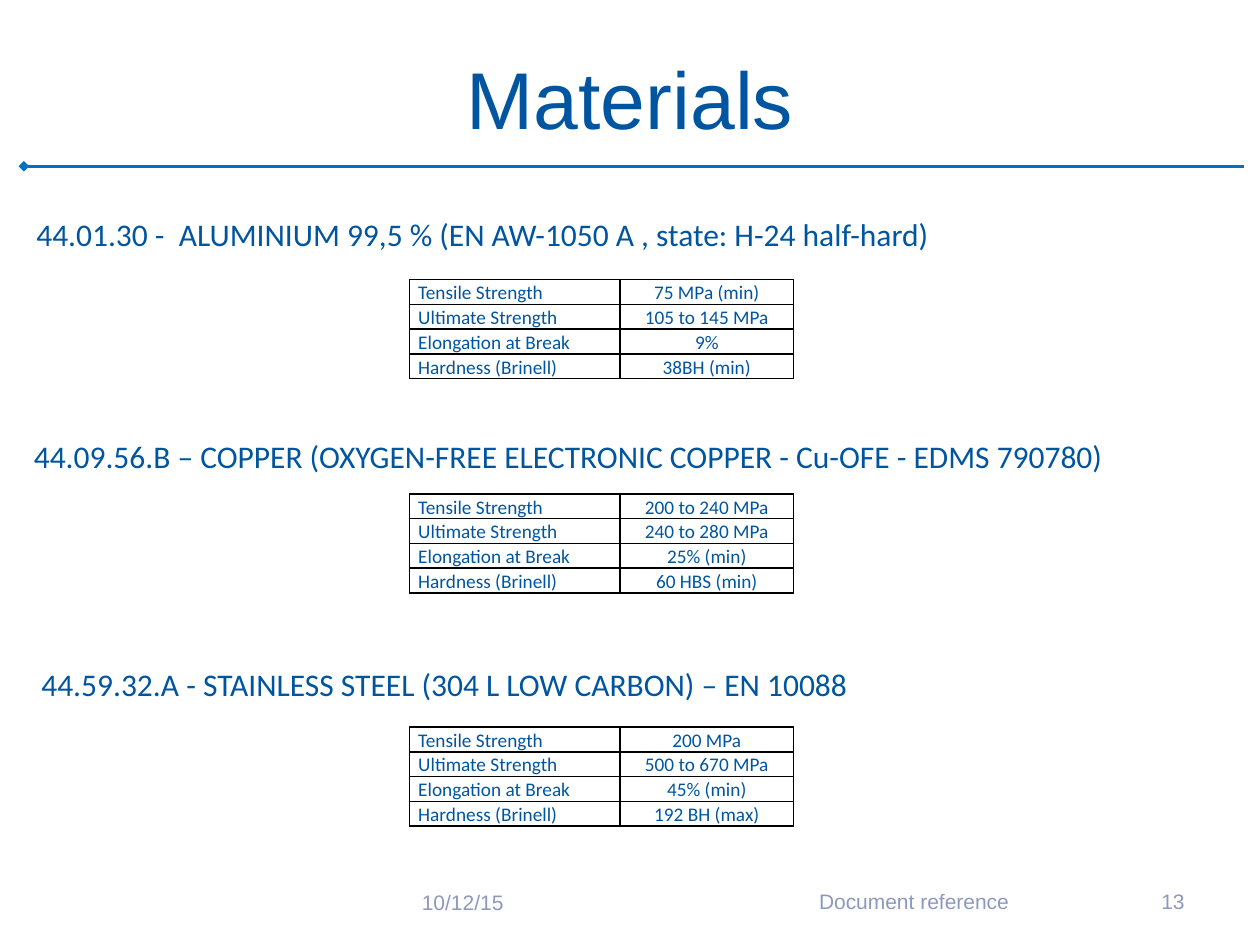
from lxml import etree
from pptx import Presentation
from pptx import util as u
from pptx.dml.color import RGBColor
from pptx.enum import shapes, text
from pptx.oxml import ns

Pt = u.Pt
HUES = {"blue": "0055A0", "rule": "0070C0", "foot": "8C99BE", "edge": "000000"}
SIDE = text.PP_ALIGN
MID = text.MSO_ANCHOR.MIDDLE
TOP = text.MSO_ANCHOR.TOP


def write(frame, words, align, hue, font, space=1.0):
    para = frame.paragraphs[0]
    para.alignment = align
    para.line_spacing = space
    run = para.add_run()
    run.text = words
    for key, val in font.items():
        setattr(run.font, key, val)
    run.font.color.rgb = RGBColor.from_string(HUES[hue])


def label(words, box, align, hue, font, anchor=MID, space=1.0):
    frame = slide.shapes.add_textbox(*map(Pt, box)).text_frame
    frame.word_wrap = True
    frame.vertical_anchor = anchor
    write(frame, words, align, hue, font, space)


deck = Presentation()
deck.slide_width, deck.slide_height = Pt(720), Pt(540)
slide = deck.slides.add_slide(deck.slide_layouts[6])

# Title
label("Materials", (36, 18.72, 648, 74.16), SIDE.CENTER, "blue",
      {"name": "Arial", "size": Pt(46)})

# Rule under the title
rule = slide.shapes.add_connector(shapes.MSO_CONNECTOR.STRAIGHT,
                                  Pt(13.68), Pt(95.04), Pt(710.64), Pt(95.04))
rule.line.color.rgb = RGBColor.from_string(HUES["rule"])
rule.line.width = Pt(1.5)
etree.SubElement(rule.line._get_or_add_ln(), ns.qn("a:headEnd"), type="diamond")
etree.SubElement(rule._element.spPr, ns.qn("a:effectLst"))

# Materials: heading, heading box, table top, values
NAMES = ["Tensile Strength", "Ultimate Strength", "Elongation at Break",
         "Hardness (Brinell)"]
METALS = [
    ("44.01.30 -  ALUMINIUM 99,5 % (EN AW-1050 A , state: H-24 half-hard)",
     (13.68, 118.08, 648, 29.52), 159.84,
     ["75 MPa (min)", "105 to 145 MPa", "9%", "38BH (min)"]),
    ("44.09.56.B – COPPER (OXYGEN-FREE ELECTRONIC COPPER - Cu-OFE - EDMS 790780)",
     (12.24, 244.8, 651.6, 29.52), 282.24,
     ["200 to 240 MPa", "240 to 280 MPa", "25% (min)", "60 HBS (min)"]),
    ("44.59.32.A - STAINLESS STEEL (304 L LOW CARBON) – EN 10088",
     (16.56, 375.12, 670.32, 29.52), 415.44,
     ["200 MPa", "500 to 670 MPa", "45% (min)", "192 BH (max)"]),
]
COLS = [120.24, 99.36]
ROW = 14.1
INSET = {"margin_left": Pt(5), "margin_right": Pt(5),
         "margin_top": 0, "margin_bottom": 0}

for head, box, top, vals in METALS:
    label(head, box, SIDE.LEFT, "blue", {"name": "Calibri", "size": Pt(18)},
          TOP, 1.07)
    grid = slide.shapes.add_table(len(NAMES), 2, Pt(234), Pt(top),
                                  Pt(sum(COLS)), Pt(ROW * len(NAMES))).table
    grid.first_row = grid.horz_banding = False
    for col, wide in zip(grid.columns, COLS):
        col.width = Pt(wide)
    for row, pair in zip(grid.rows, zip(NAMES, vals)):
        row.height = Pt(ROW)
        for cell, words, align in zip(row.cells, pair, (SIDE.JUSTIFY, SIDE.CENTER)):
            for key, val in INSET.items():
                setattr(cell, key, val)
            write(cell.text_frame, words, align, "blue",
                  {"name": "Calibri", "size": Pt(11)}, 1.07)
            # Borders come before the fill in the cell properties
            props = cell._tc.get_or_add_tcPr()
            for edge in ("lnL", "lnR", "lnT", "lnB"):
                line = etree.SubElement(props, ns.qn("a:" + edge), w=str(Pt(1)))
                ink = etree.SubElement(line, ns.qn("a:solidFill"))
                etree.SubElement(ink, ns.qn("a:srgbClr"), val=HUES["edge"])
            cell.fill.background()

# Footer
for words, box, align in [
    ("10/12/15", (234, 501.12, 167.76, 28.8), SIDE.LEFT),
    ("Document reference", (408.24, 500.4, 228.24, 28.8), SIDE.CENTER),
    ("13", (644.4, 500.4, 39.6, 28.8), SIDE.RIGHT),
]:
    label(words, box, align, "foot", {"name": "Arial", "size": Pt(12)})

deck.save("out.pptx")
